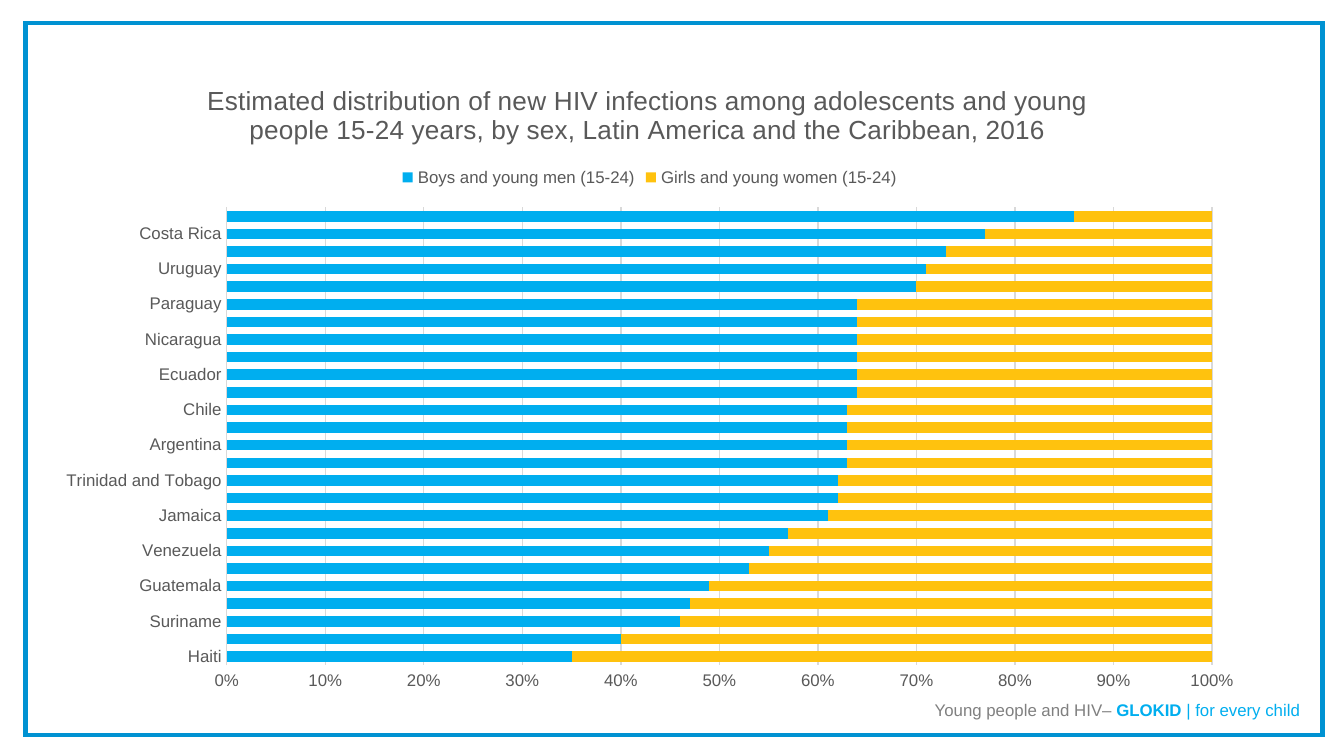
"""Build a slide with a stacked bar chart of new HIV infections by sex."""
from typing import NamedTuple

from lxml import etree
from pptx import Presentation
from pptx import util as u
from pptx.chart.data import CategoryChartData
from pptx.dml.color import RGBColor
from pptx.enum import chart as ch, shapes, text
from pptx.oxml import ns

BLUE = RGBColor(0x00, 0x92, 0xD2)
CYAN = RGBColor(0x00, 0xAE, 0xEF)
GOLD = RGBColor(0xFF, 0xC2, 0x0E)
DARK = RGBColor(0x59, 0x59, 0x59)
GRAY = RGBColor(0x80, 0x80, 0x80)
PALE = RGBColor(0xD9, 0xD9, 0xD9)
FACE = "Arial"
WIDE = 10
TITLE = ("Estimated distribution of new HIV infections among adolescents and young "
         "people 15-24 years, by sex, Latin America and the Caribbean, 2016")
BOYS = {
    "Haiti": 35, "Guyana": 40, "Suriname": 46, "Belize": 47, "Guatemala": 49,
    "Dominican Republic": 53, "Venezuela": 55, "Barbados": 57, "Jamaica": 61,
    "Brazil": 62, "Trinidad and Tobago": 62, "El Salvador": 63, "Argentina": 63,
    "Panama": 63, "Chile": 63, "Cuba": 64, "Ecuador": 64, "Bolivia": 64,
    "Nicaragua": 64, "Honduras": 64, "Paraguay": 64, "Peru": 70, "Uruguay": 71,
    "Mexico": 73, "Costa Rica": 77, "Colombia": 86,
}


class Group(NamedTuple):
    name: str
    color: RGBColor
    vals: list[int]


class Part(NamedTuple):
    words: str
    color: RGBColor
    bold: bool


GROUPS = [
    Group("Boys and young men (15-24)", CYAN, list(BOYS.values())),
    Group("Girls and young women (15-24)", GOLD, [100 - val for val in BOYS.values()]),
]
PARTS = [
    Part("Young people and HIV– ", GRAY, False),
    Part("GLOKID", CYAN, True),
    Part(" | for every child", CYAN, False),
]


def style(font, size: float, color: RGBColor, bold: bool = False) -> None:
    """Set face, size, colour and weight of a font."""
    font.name, font.size, font.bold = FACE, u.Pt(size), bold
    font.color.rgb = color


def place(node, index: int, **spots: float) -> None:
    """Give a chart part a manual layout in fractions of the chart."""
    for old in node.findall(ns.qn("c:layout")):
        node.remove(old)
    layout = etree.Element(ns.qn("c:layout"))
    manual = etree.SubElement(layout, ns.qn("c:manualLayout"))
    if index == 0:
        etree.SubElement(manual, ns.qn("c:layoutTarget")).set("val", "inner")
    for key in ("x", "y"):
        etree.SubElement(manual, ns.qn(f"c:{key}Mode")).set("val", "edge")
    for key, val in spots.items():
        etree.SubElement(manual, ns.qn(f"c:{key}")).set("val", str(val))
    node.insert(index, layout)


def add_frame(slide) -> None:
    """Draw the blue border with sharp corners."""
    frame = slide.shapes.add_shape(
        shapes.MSO_SHAPE.RECTANGLE,
        u.Inches(0.19), u.Inches(0.17), u.Inches(9.65), u.Inches(5.3))
    frame.shadow.inherit = False
    frame.fill.background()
    frame.line.color.rgb = BLUE
    frame.line.width = u.Pt(2.25)
    edge = frame._element.spPr.find(ns.qn("a:ln"))
    etree.SubElement(edge, ns.qn("a:miter")).set("lim", "800000")


def add_footer(slide, parts: list[Part]) -> None:
    """Write the footer line."""
    box = slide.shapes.add_textbox(
        u.Inches(6.6), u.Inches(5.13), u.Inches(3.17), u.Inches(0.3))
    frame = box.text_frame
    frame.word_wrap = True
    frame.vertical_anchor = text.MSO_ANCHOR.MIDDLE
    line = frame.paragraphs[0]
    line.alignment = text.PP_ALIGN.RIGHT
    for part in parts:
        run = line.add_run()
        run.text = part.words
        style(run.font, 9, part.color, part.bold)


def add_title(chart) -> None:
    """Write the chart title."""
    frame = chart.chart_title.text_frame
    frame.text = TITLE
    style(frame.paragraphs[0].runs[0].font, 14, DARK)
    chart.chart_title.include_in_layout = False
    place(chart.chart_title._element, 1, x=0.13, y=0.03)


def style_axes(chart) -> None:
    """Format both axes and the grid."""
    for axis in (chart.category_axis, chart.value_axis):
        axis.major_tick_mark = axis.minor_tick_mark = ch.XL_TICK_MARK.NONE
        style(axis.tick_labels.font, 9, DARK)
    cats, vals = chart.category_axis, chart.value_axis
    cats.format.line.color.rgb = PALE
    cats.format.line.width = u.Pt(0.75)
    skip = etree.Element(ns.qn("c:tickLblSkip"))
    skip.set("val", "2")
    cats._element.find(ns.qn("c:noMultiLvlLbl")).addprevious(skip)
    vals.format.line.fill.background()
    vals.has_major_gridlines = True
    grid = vals.major_gridlines.format.line
    grid.color.rgb = PALE
    grid.width = u.Pt(0.75)
    vals.tick_labels.number_format = "0%"
    vals.tick_labels.number_format_is_linked = False


def add_bars(slide, groups: list[Group]) -> None:
    """Draw the chart with its title, legend and axes."""
    data = CategoryChartData(number_format="0")
    data.categories = list(BOYS)
    for group in groups:
        data.add_series(group.name, group.vals)
    chart = slide.shapes.add_chart(
        ch.XL_CHART_TYPE.BAR_STACKED_100,
        u.Inches(0.33), u.Inches(0.44), u.Inches(9.05), u.Inches(4.8), data).chart
    style(chart.font, 10, DARK)
    plot = chart.plots[0]
    plot.gap_width, plot.overlap, plot.vary_by_categories = 66, 100, False
    for group, bars in zip(groups, plot.series):
        bars.format.fill.solid()
        bars.format.fill.fore_color.rgb = group.color
    add_title(chart)
    style_axes(chart)
    chart.has_legend = True
    chart.legend.position = ch.XL_LEGEND_POSITION.TOP
    chart.legend.include_in_layout = False
    style(chart.legend.font, 9, DARK)
    place(chart.legend._element, 1, x=0.29, y=0.16)
    area = chart._chartSpace.chart.plotArea
    place(area, 0, x=0.15, y=0.23, w=0.81, h=0.71)


def main() -> None:
    """Build and save the deck."""
    deck = Presentation()
    deck.slide_width, deck.slide_height = u.Inches(WIDE), u.Inches(WIDE * 9 / 16)
    slide = deck.slides.add_slide(deck.slide_layouts[6])
    add_frame(slide)
    add_footer(slide, PARTS)
    add_bars(slide, GROUPS)
    deck.save("out.pptx")


if __name__ == "__main__":
    main()
